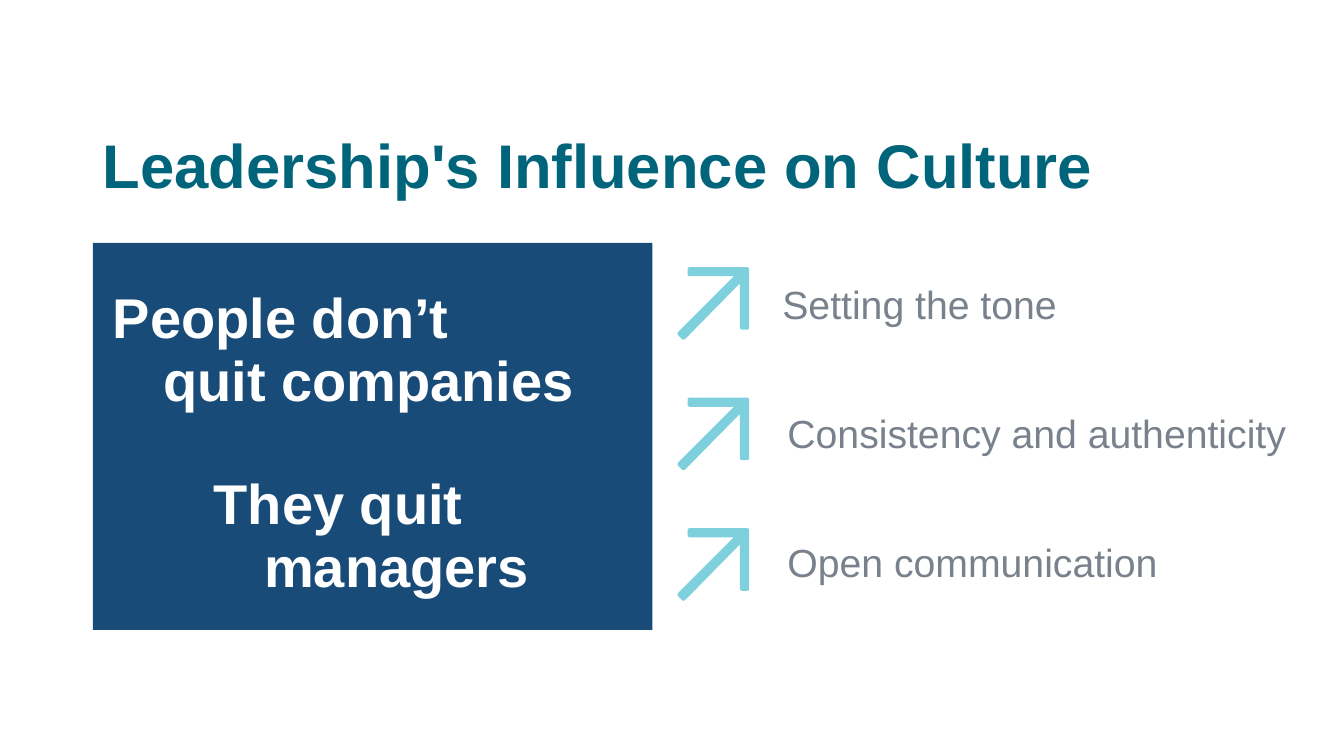
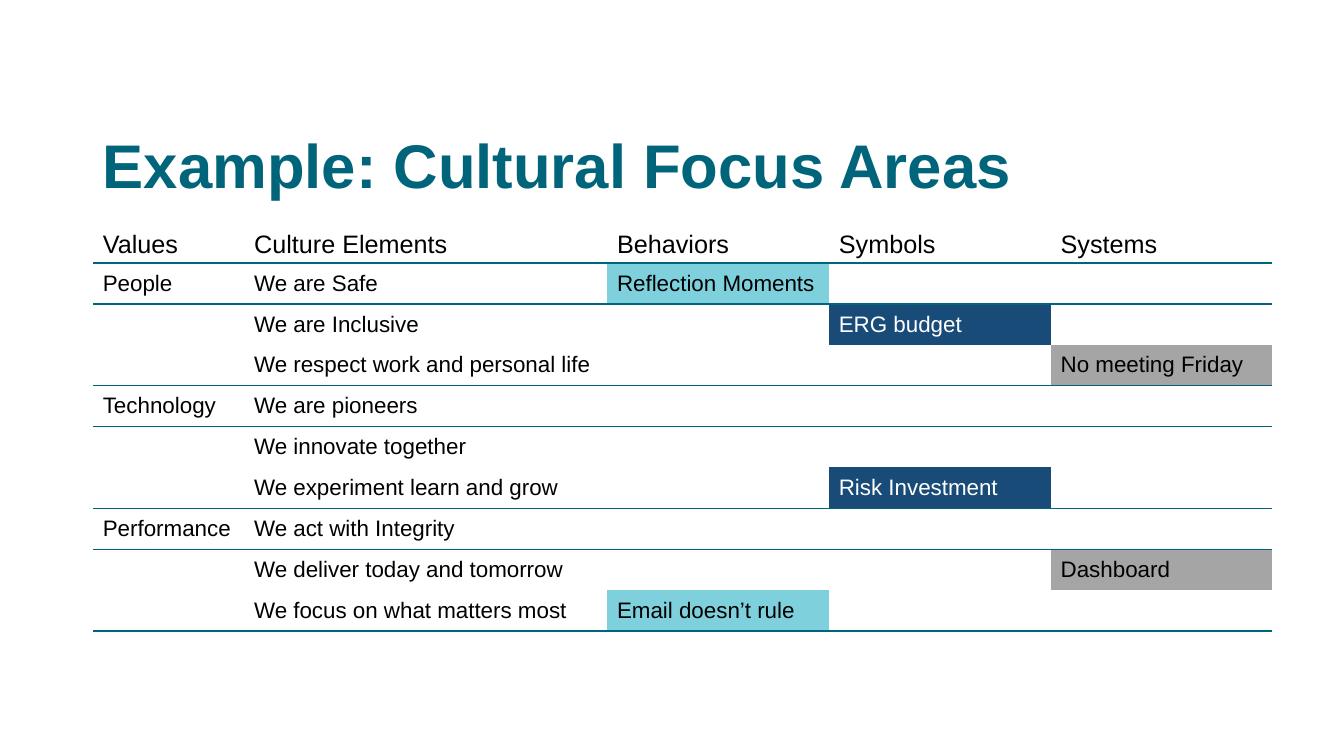
from dataclasses import dataclass
from typing import Any, Optional

from lxml.etree import SubElement
from pptx import Presentation
from pptx.dml.color import RGBColor
from pptx.enum.shapes import MSO_SHAPE as Shape
from pptx.enum.text import MSO_ANCHOR as Anchor, MSO_AUTO_SIZE as Auto, PP_ALIGN as Align
from pptx.oxml.ns import qn
from pptx.util import Inches, Pt

TEAL = RGBColor(0x00, 0x64, 0x7A)
NAVY = RGBColor(0x19, 0x4B, 0x78)
AQUA = RGBColor(0x7F, 0xD0, 0xDD)
SLATE = RGBColor(0x78, 0x81, 0x8C)
GRAY = RGBColor(0xA5, 0xA5, 0xA5)
WHITE = RGBColor(0xFF, 0xFF, 0xFF)
BLACK = RGBColor(0x00, 0x00, 0x00)

FACE = "Arial"
LEFT = 0.92
TOP = 2.41
TALL = 3.84
PLAIN = "{2D5ABB26-0587-4C30-8999-92F81FD0307C}"
ARROW = [(0.67, 0.58), (0.62, 0.58), (0.62, 0.09), (0.04, 0.68), (0, 0.64), (0.59, 0.05),
         (0.1, 0.05), (0.1, 0), (0.67, 0)]


@dataclass
class Line:
    """A line of text with its indent in inches and the gap above in points."""
    text: str
    indent: float = 0
    gap: float = 0


@dataclass
class Focus:
    """A culture element with an optional action in one column."""
    text: str
    col: int = 0
    act: str = ""


QUOTE = [Line("People don’t"), Line("quit companies", 0.5),
         Line("They quit", 1, 43), Line("managers", 1.5)]
POINTS = [Line("Setting the tone", 1.2), Line("Consistency and authenticity", 1.25),
          Line("Open communication", 1.25)]
HEADS = ["Values", "Culture Elements", "Behaviors", "Symbols", "Systems"]
WIDTHS = [1.5, 3.6, 2.2, 2.2, 2.2]
VALUES = {
    "People": [Focus("We are Safe", 2, "Reflection Moments"),
               Focus("We are Inclusive", 3, "ERG budget"),
               Focus("We respect work and personal life", 4, "No meeting Friday")],
    "Technology": [Focus("We are pioneers"), Focus("We innovate together"),
                   Focus("We experiment learn and grow", 3, "Risk Investment")],
    "Performance": [Focus("We act with Integrity"),
                    Focus("We deliver today and tomorrow", 4, "Dashboard"),
                    Focus("We focus on what matters most", 2, "Email doesn’t rule")],
}
FILLS = {2: AQUA, 3: NAVY, 4: GRAY}


def apply(item: Any, form: dict[str, Any]) -> None:
    """Set attributes from a dict of format values."""
    for name, value in form.items():
        setattr(item, name, value)


def style(para: Any, size: float, color: RGBColor, bold: bool = False) -> None:
    """Format the font of a paragraph."""
    apply(para.font, {"name": FACE, "size": Pt(size), "bold": bold})
    para.font.color.rgb = color


def write(para: Any, line: Line, size: float, color: RGBColor, bold: bool = False,
          space: float = 0.9) -> None:
    """Fill a paragraph with an indented line."""
    para.text = line.text
    para._p.get_or_add_pPr().set("marL", str(Inches(line.indent)))
    apply(para, {"alignment": Align.LEFT, "line_spacing": space, "space_before": Pt(line.gap)})
    style(para, size, color, bold)


def start(deck: Any, text: str) -> Any:
    """Add a slide with its title."""
    slide = deck.slides.add_slide(deck.slide_layouts[5])
    title = slide.shapes.title
    apply(title, {"left": Inches(LEFT), "top": Inches(1.25),
                  "width": Inches(11.5), "height": Inches(0.85)})
    apply(title.text_frame, {"vertical_anchor": Anchor.MIDDLE, "auto_size": Auto.NONE,
                             "word_wrap": True})
    write(title.text_frame.paragraphs[0], Line(text), 44, TEAL, True)
    return slide


def paint(shape: Any, color: RGBColor) -> None:
    """Give a shape a solid fill and no shadow."""
    shape.shadow.inherit = False
    shape.fill.solid()
    shape.fill.fore_color.rgb = color


def panel(slide: Any) -> None:
    """Draw the quote panel."""
    box = slide.shapes.add_shape(Shape.RECTANGLE, Inches(LEFT), Inches(TOP),
                                 Inches(5.55), Inches(TALL))
    paint(box, NAVY)
    box.line.fill.background()
    frame = box.text_frame
    apply(frame, {"vertical_anchor": Anchor.MIDDLE, "word_wrap": True,
                  "margin_left": Inches(0.2), "margin_top": Inches(0.2),
                  "margin_right": Inches(0.1), "margin_bottom": Inches(0.05)})
    for num, line in enumerate(QUOTE):
        para = frame.add_paragraph() if num else frame.paragraphs[0]
        write(para, line, 40, WHITE, True, 0.94)


def arrow(slide: Any, left: float, top: float) -> None:
    """Draw an arrow that points up and right."""
    spots = [(Inches(left + x), Inches(top + y)) for x, y in ARROW]
    pen = slide.shapes.build_freeform(*spots[0])
    pen.add_line_segments(spots[1:], close=True)
    shape = pen.convert_to_shape()
    paint(shape, AQUA)
    shape.line.color.rgb = AQUA
    shape.line.width = Pt(3)


def grid(slide: Any, left: float, top: float, cols: list[float], rows: list[float]) -> Any:
    """Add a table without bands, fills or borders."""
    table = slide.shapes.add_table(len(rows), len(cols), Inches(left), Inches(top),
                                   Inches(sum(cols)), Inches(sum(rows))).table
    apply(table, {"first_row": False, "horz_banding": False})
    table._tbl.tblPr.find(qn("a:tableStyleId")).text = PLAIN
    for col, width in zip(table.columns, cols):
        col.width = Inches(width)
    for row, height in zip(table.rows, rows):
        row.height = Inches(height)
    for cell in table.iter_cells():
        cell.fill.background()
        cell.vertical_anchor = Anchor.MIDDLE
    return table


def edge(cell: Any, side: str) -> None:
    """Rule one side of a cell."""
    props = cell._tc.get_or_add_tcPr()
    rule = SubElement(props, qn(f"a:{side}"), w=str(Pt(1)))
    fill = SubElement(rule, qn("a:solidFill"))
    SubElement(fill, qn("a:srgbClr"), val=str(TEAL))
    props.insert(0, rule)


def put(cell: Any, text: str, size: float = 16, fill: Optional[RGBColor] = None) -> None:
    """Write text in a cell and fill it."""
    color = WHITE if fill == NAVY else BLACK
    write(cell.text_frame.paragraphs[0], Line(text), size, color, space=1.0)
    if fill is not None:
        cell.fill.solid()
        cell.fill.fore_color.rgb = fill


def lead(deck: Any) -> None:
    """Build the leadership slide."""
    slide = start(deck, "Leadership's Influence on Culture")
    panel(slide)
    step = TALL / len(POINTS)
    for num in range(len(POINTS)):
        arrow(slide, 6.74, 2.67 + num * 1.295)
    table = grid(slide, 6.46, TOP, [6.87], [step] * len(POINTS))
    for cell, line in zip(table.iter_cells(), POINTS):
        write(cell.text_frame.paragraphs[0], line, 28, SLATE)


def areas(deck: Any) -> None:
    """Build the focus areas slide."""
    slide = start(deck, "Example: Cultural Focus Areas")
    table = grid(slide, LEFT, 2.24, WIDTHS, [0.37] + [3.65 / 9] * 9)
    for col, head in enumerate(HEADS):
        cell = table.cell(0, col)
        apply(cell, {"vertical_anchor": Anchor.TOP, "margin_bottom": Inches(0.03)})
        put(cell, head, 18)
    row = 0
    for value, items in VALUES.items():
        put(table.cell(row + 1, 0), value)
        for item in items:
            row += 1
            put(table.cell(row, 1), item.text)
            if item.act:
                put(table.cell(row, item.col), item.act, fill=FILLS[item.col])
    for row in range(0, 10, 3):
        for col in range(len(HEADS)):
            edge(table.cell(row, col), "lnB")
            if row < 9:
                edge(table.cell(row + 1, col), "lnT")


def main() -> None:
    """Build and save the deck."""
    deck = Presentation()
    apply(deck, {"slide_width": Inches(13.33), "slide_height": Inches(7.5)})
    lead(deck)
    areas(deck)
    deck.save("out.pptx")


if __name__ == "__main__":
    main()
